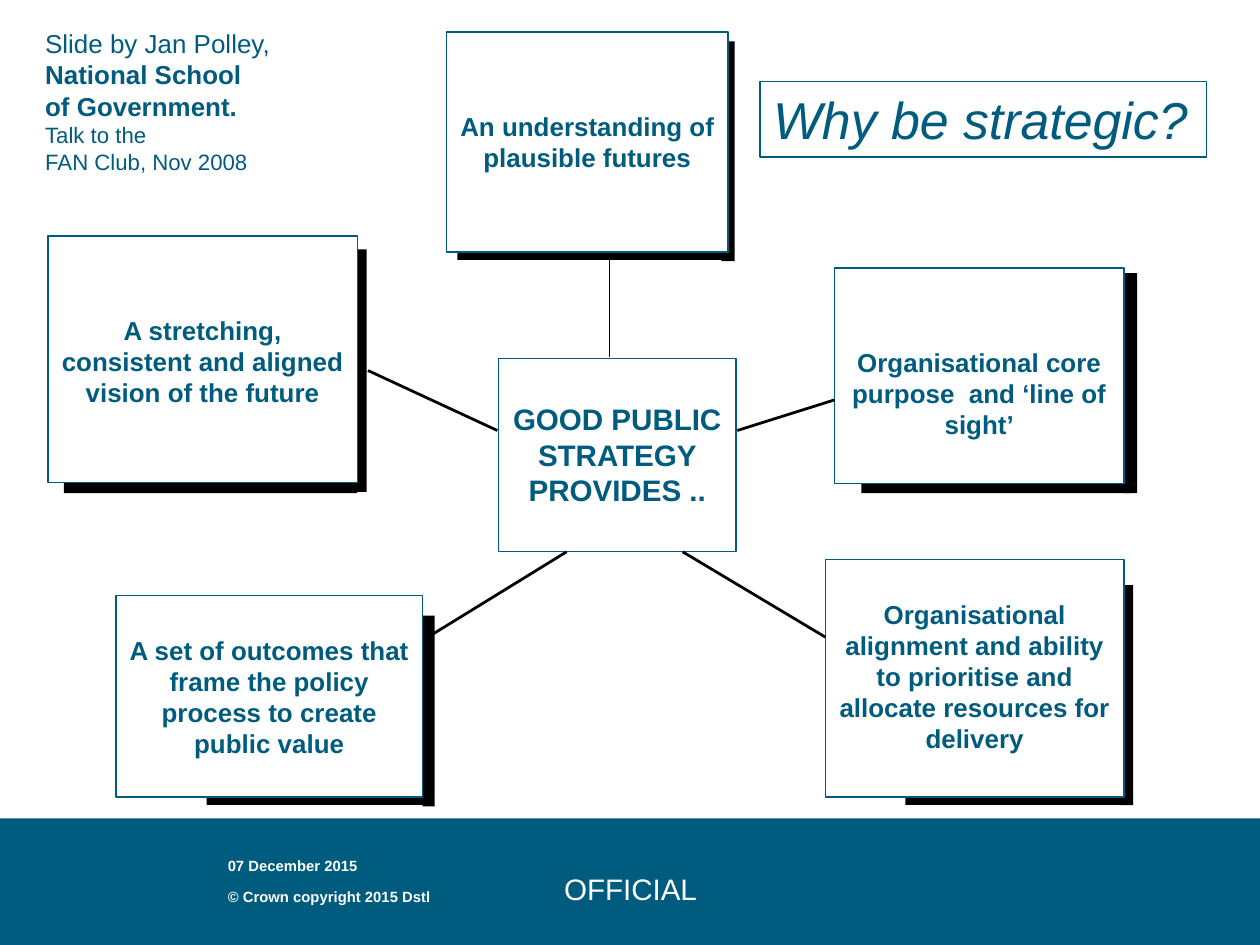
from typing import NamedTuple

from lxml.etree import SubElement
from pptx import Presentation
from pptx.dml.color import RGBColor
from pptx.enum.shapes import MSO_CONNECTOR, MSO_SHAPE
from pptx.enum.text import MSO_ANCHOR, PP_ALIGN
from pptx.oxml.ns import qn
from pptx.util import Inches, Pt

TEAL = RGBColor(0x00, 0x5C, 0x7E)
WHITE = RGBColor(0xFF, 0xFF, 0xFF)
BLACK = RGBColor(0x00, 0x00, 0x00)


class Box(NamedTuple):
    """A rectangle in inches."""
    left: float
    top: float
    width: float
    height: float

    def lengths(self):
        """Return the four values as slide lengths."""
        return [Inches(value) for value in self]


class Card(NamedTuple):
    """A benefit with its side bar set from the top right and base bar from the bottom left."""
    box: Box
    text: str
    text_top: float
    side: Box
    base: Box


CARDS = [
    Card(Box(0.36, 1.77, 2.32, 1.85),
         "A stretching,\nconsistent and aligned\nvision of the future", 0.59,
         Box(-0.06, 0.10, 0.13, 1.82), Box(0.12, -0.04, 2.20, 0.12)),
    Card(Box(0.87, 4.47, 2.30, 1.51),
         "A set of outcomes that\nframe the policy\nprocess to create\npublic value", 0.29,
         Box(0, 0.15, 0.09, 1.43), Box(0.68, -0.04, 1.65, 0.10)),
    Card(Box(6.26, 2.01, 2.17, 1.62),
         "Organisational core\npurpose  and ‘line of\nsight’", 0.59,
         Box(0, 0.04, 0.10, 1.65), Box(0.20, -0.03, 2.02, 0.10)),
    Card(Box(3.35, 0.24, 2.11, 1.65),
         "An understanding of\nplausible futures", 0.59,
         Box(-0.05, 0.07, 0.10, 1.65), Box(0.08, -0.03, 2.03, 0.09)),
    Card(Box(6.19, 4.20, 2.24, 1.78),
         "Organisational\nalignment and ability\nto prioritise and\nallocate resources for\ndelivery", 0.29,
         Box(-0.03, 0.19, 0.10, 1.65), Box(0.60, -0.04, 1.65, 0.10)),
]

LINKS = [
    ((3.73, 3.23), (2.76, 2.78), 1.5),
    ((6.26, 3.00), (5.53, 3.23), 1.5),
    ((6.19, 4.78), (5.12, 4.14), 1.5),
    ((3.21, 4.78), (4.25, 4.14), 1.5),
    ((4.57, 2.68), (4.57, 1.95), 0.75),
]


def add_rectangle(page, box, fill=None, line=None):
    """Add a flat rectangle with an optional fill and thin outline."""
    shape = page.shapes.add_shape(MSO_SHAPE.RECTANGLE, *box.lengths())
    shape.shadow.inherit = False
    if fill is None:
        shape.fill.background()
    else:
        shape.fill.solid()
        shape.fill.fore_color.rgb = fill
    if line is None:
        shape.line.fill.background()
    else:
        shape.line.color.rgb = line
        shape.line.width = Pt(0.75)
    return shape


def write(shape, text, size, color=TEAL, bold=False, italic=False,
          align=PP_ALIGN.LEFT, anchor=MSO_ANCHOR.TOP, top=0.05, wrap=False):
    """Fill a shape with evenly styled paragraphs and return its frame."""
    frame = shape.text_frame
    frame.text = text
    frame.word_wrap = wrap
    frame.vertical_anchor = anchor
    frame.margin_top = Inches(top)
    for para in frame.paragraphs:
        para.alignment = align
        for span in para.runs:
            font = span.font
            font.name, font.size = "Arial", Pt(size)
            font.bold, font.italic = bold, italic
            font.color.rgb = color
    return frame


def add_footer(page, box):
    """Add the footer band with its date, copyright line and marking."""
    add_rectangle(page, box, fill=TEAL)
    marking = page.shapes.add_textbox(
        *Box(box.left + 3.43, box.top, 2.6, box.height).lengths())
    frame = write(marking, "OFFICIAL", 16, WHITE, align=PP_ALIGN.CENTER,
                  anchor=MSO_ANCHOR.MIDDLE, top=0.09, wrap=True)
    frame.paragraphs[0].line_spacing = Pt(24)
    for text, offset, anchor in (
            ("07 December 2015", 0.16, MSO_ANCHOR.BOTTOM),
            ("© Crown copyright 2015 Dstl", 0.47, MSO_ANCHOR.TOP)):
        label = page.shapes.add_textbox(
            *Box(box.left + 1.61, box.top + offset, 1.81, 0.31).lengths())
        write(label, text, 8, WHITE, bold=True, anchor=anchor, wrap=True)


def add_credit(page, box):
    """Add the speaker credit, with the school in bold and the event smaller."""
    credit = page.shapes.add_textbox(*box.lengths())
    frame = write(credit, "Slide by Jan Polley,\nNational School\nof Government.\n"
                  "Talk to the\nFAN Club, Nov 2008", 14, wrap=True)
    for para in frame.paragraphs[1:3]:
        para.runs[0].font.bold = True
    for para in frame.paragraphs[3:]:
        para.runs[0].font.size = Pt(12)


def add_title(page, box):
    """Add the outlined title."""
    write(add_rectangle(page, box, line=TEAL), "Why be strategic?", 28, italic=True)


def add_hub(page, box):
    """Add the central statement."""
    write(add_rectangle(page, box, line=TEAL), "GOOD PUBLIC\nSTRATEGY\nPROVIDES ..", 16,
          bold=True, align=PP_ALIGN.CENTER, top=0.32)


def add_card(page, card):
    """Add a benefit card over its two black shadow bars."""
    box, side, base = card.box, card.side, card.base
    add_rectangle(page, side._replace(left=box.left + box.width + side.left,
                                      top=box.top + side.top), fill=BLACK)
    add_rectangle(page, base._replace(left=box.left + base.left,
                                      top=box.top + box.height + base.top), fill=BLACK)
    write(add_rectangle(page, box, fill=WHITE, line=TEAL), card.text, 14,
          bold=True, align=PP_ALIGN.CENTER, top=card.text_top)


def add_link(page, start, end, width):
    """Add a straight black line between two points."""
    link = page.shapes.add_connector(
        MSO_CONNECTOR.STRAIGHT, *[Inches(value) for value in start + end])
    link.line.color.rgb = BLACK
    link.line.width = Pt(width)
    SubElement(link._element.spPr, qn("a:effectLst"))


def main():
    """Build and save the slide."""
    deck = Presentation()
    deck.slide_width, deck.slide_height = Inches(9.45), Inches(7.09)
    page = deck.slides.add_slide(deck.slide_layouts[6])
    add_footer(page, Box(0, 6.14, 9.45, 0.95))
    add_credit(page, Box(0.24, 0.16, 4.72, 1.21))
    add_title(page, Box(5.70, 0.61, 3.35, 0.57))
    add_hub(page, Box(3.74, 2.69, 1.78, 1.45))
    for card in CARDS:
        add_card(page, card)
    for start, end, width in LINKS:
        add_link(page, start, end, width)
    deck.save("out.pptx")


if __name__ == "__main__":
    main()
